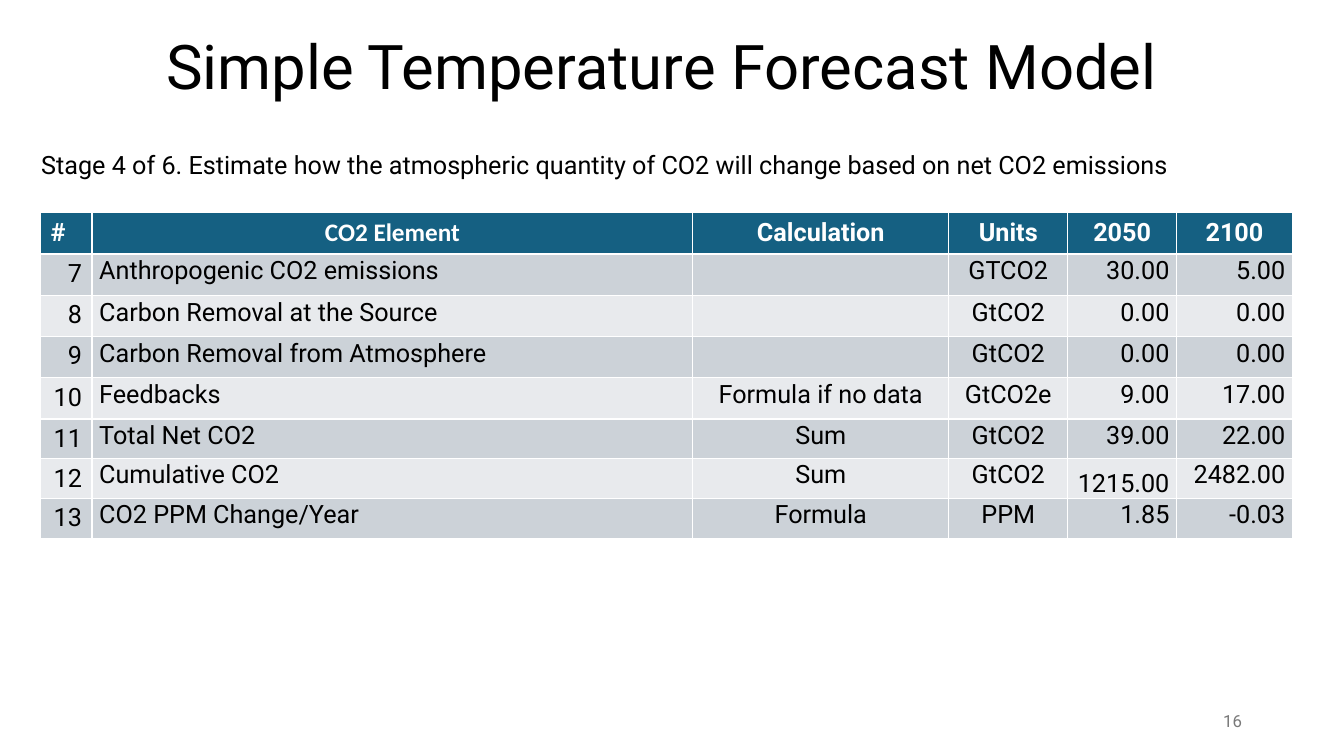
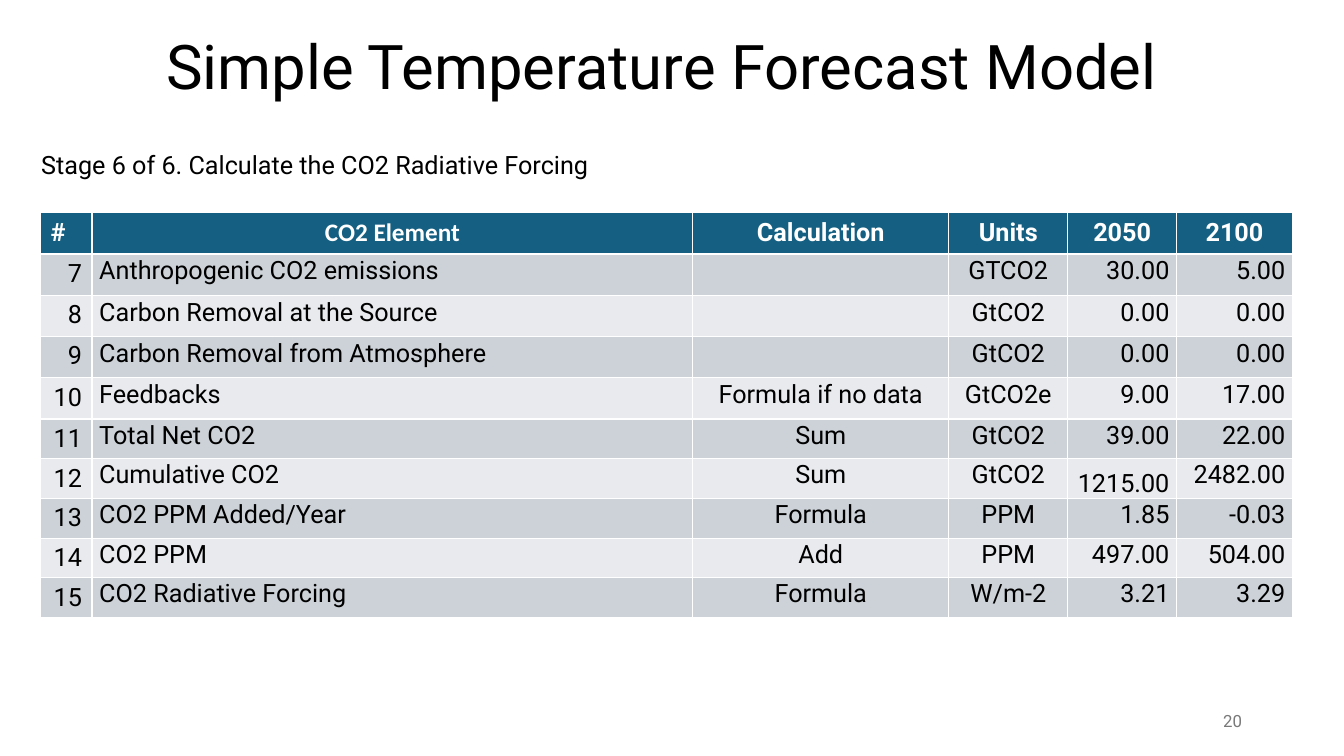
from pptx import Presentation
from pptx import util as u
from pptx.dml import color
from pptx.enum import text

COLORS = {"ink": "000000", "paper": "FFFFFF", "header": "156082",
          "odd": "CCD2D8", "even": "E8EAED", "muted": "797979"}
ALIGN = text.PP_ALIGN
ANCHOR = text.MSO_ANCHOR
TITLE = "Simple Temperature Forecast Model"
HEADINGS = ("#", "CO2 Element", "Calculation", "Units", "2050", "2100")
COLUMN_WIDTHS = (1.3, 15.14, 6.45, 3, 2.74, 2.92)
COLUMN_ALIGNS = (ALIGN.RIGHT, ALIGN.LEFT, ALIGN.CENTER, ALIGN.CENTER,
                 ALIGN.RIGHT, ALIGN.RIGHT)
FIRST_NUMBER = 7
TALL_ROWS = 5

EMISSIONS = [
    ("Anthropogenic CO2 emissions", "", "GTCO2", "30.00", "5.00"),
    ("Carbon Removal at the Source", "", "GtCO2", "0.00", "0.00"),
    ("Carbon Removal from Atmosphere", "", "GtCO2", "0.00", "0.00"),
    ("Feedbacks", "Formula if no data", "GtCO2e", "9.00", "17.00"),
    ("Total Net CO2", "Sum", "GtCO2", "39.00", "22.00"),
    ("Cumulative CO2", "Sum", "GtCO2", "1215.00", "2482.00"),
]
PPM_CHANGE = ("Formula", "PPM", "1.85", "-0.03")
FORCING = [
    ("CO2 PPM", "Add", "PPM", "497.00", "504.00"),
    ("CO2 Radiative Forcing", "Formula", "W/m-2", "3.21", "3.29"),
]
STAGES = [
    ("Stage 4 of 6. Estimate how the atmospheric quantity of CO2 will change "
     "based on net CO2 emissions", 31.3, "16",
     EMISSIONS + [("CO2 PPM Change/Year", *PPM_CHANGE)]),
    ("Stage 6 of 6. Calculate the CO2 Radiative Forcing", 16.33, "20",
     EMISSIONS + [("CO2 PPM Added/Year", *PPM_CHANGE)] + FORCING),
]


class ForecastDeck:
    def __init__(self):
        self.deck = Presentation()
        self.deck.slide_width = u.Cm(33.87)
        self.deck.slide_height = u.Cm(19.05)
        self.page = None

    def add_page(self):
        self.page = self.deck.slides.add_slide(self.deck.slide_layouts[5])

    def set_words(self, frame, words, size=18, ink="ink", align=ALIGN.LEFT,
                  bold=False, font="Roboto"):
        frame.text = words
        para = frame.paragraphs[0]
        para.alignment = align
        for span in para.runs:
            span.font.name = font
            span.font.size = u.Pt(size)
            span.font.bold = bold
            span.font.color.rgb = color.RGBColor.from_string(COLORS[ink])
        return para

    def add_title(self, words):
        box = self.page.shapes.title
        box.left, box.top = u.Cm(2.08), u.Cm(-0.1)
        box.width, box.height = u.Cm(29.21), u.Cm(3.68)
        frame = box.text_frame
        frame.auto_size = text.MSO_AUTO_SIZE.NONE
        frame.vertical_anchor = ANCHOR.MIDDLE
        para = self.set_words(frame, words, 44, align=ALIGN.CENTER)
        para.line_spacing = 0.9

    def add_text(self, words, left, top, width, anchor=ANCHOR.TOP, **style):
        box = self.page.shapes.add_textbox(
            u.Cm(left), u.Cm(top), u.Cm(width), u.Cm(1.02))
        box.text_frame.word_wrap = True
        box.text_frame.vertical_anchor = anchor
        self.set_words(box.text_frame, words, **style)

    def fill_cell(self, cell, words, fill, **style):
        cell.fill.solid()
        cell.fill.fore_color.rgb = color.RGBColor.from_string(COLORS[fill])
        return self.set_words(cell.text_frame, words, **style)

    def fill_value(self, cell, words, fill, align):
        para = self.fill_cell(cell, words, fill, align=align)
        if not words:
            return
        cell.margin_left = cell.margin_right = u.Cm(0.18)
        cell.margin_top = cell.margin_bottom = 0
        lowered = words == "1215.00"
        cell.vertical_anchor = ANCHOR.BOTTOM if lowered else ANCHOR.MIDDLE
        para.line_spacing = 1.15 if lowered else u.Pt(16.5)
        para.space_after = u.Pt(10)

    def add_table(self, rows):
        heights = [1.04 if i < TALL_ROWS else 1 for i in range(len(rows) + 1)]
        table = self.page.shapes.add_table(
            len(heights), len(HEADINGS), u.Cm(1.02), u.Cm(5.36),
            u.Cm(sum(COLUMN_WIDTHS)), u.Cm(sum(heights))).table
        for column, width in zip(table.columns, COLUMN_WIDTHS):
            column.width = u.Cm(width)
        for row, height in zip(table.rows, heights):
            row.height = u.Cm(height)
        for x, heading in enumerate(HEADINGS):
            self.fill_cell(table.cell(0, x), heading, "header", ink="paper",
                           bold=True, font="Calibri" if x == 1 else "Roboto",
                           align=ALIGN.CENTER if x else ALIGN.LEFT)
        for y, values in enumerate(rows, 1):
            fill = "odd" if y % 2 else "even"
            self.fill_cell(table.cell(y, 0), str(FIRST_NUMBER + y - 1), fill,
                           align=COLUMN_ALIGNS[0])
            for x, words in enumerate(values, 1):
                self.fill_value(table.cell(y, x), words, fill, COLUMN_ALIGNS[x])

    def add_page_number(self, number):
        self.add_text(number, 23.93, 17.65, 7.62, ANCHOR.MIDDLE, size=12,
                      ink="muted", align=ALIGN.RIGHT)


def main():
    forecast = ForecastDeck()
    for stage, width, number, rows in STAGES:
        forecast.add_page()
        forecast.add_title(TITLE)
        forecast.add_table(rows)
        forecast.add_text(stage, 0.79, 3.63, width)
        forecast.add_page_number(number)
    forecast.deck.save("out.pptx")


if __name__ == "__main__":
    main()
